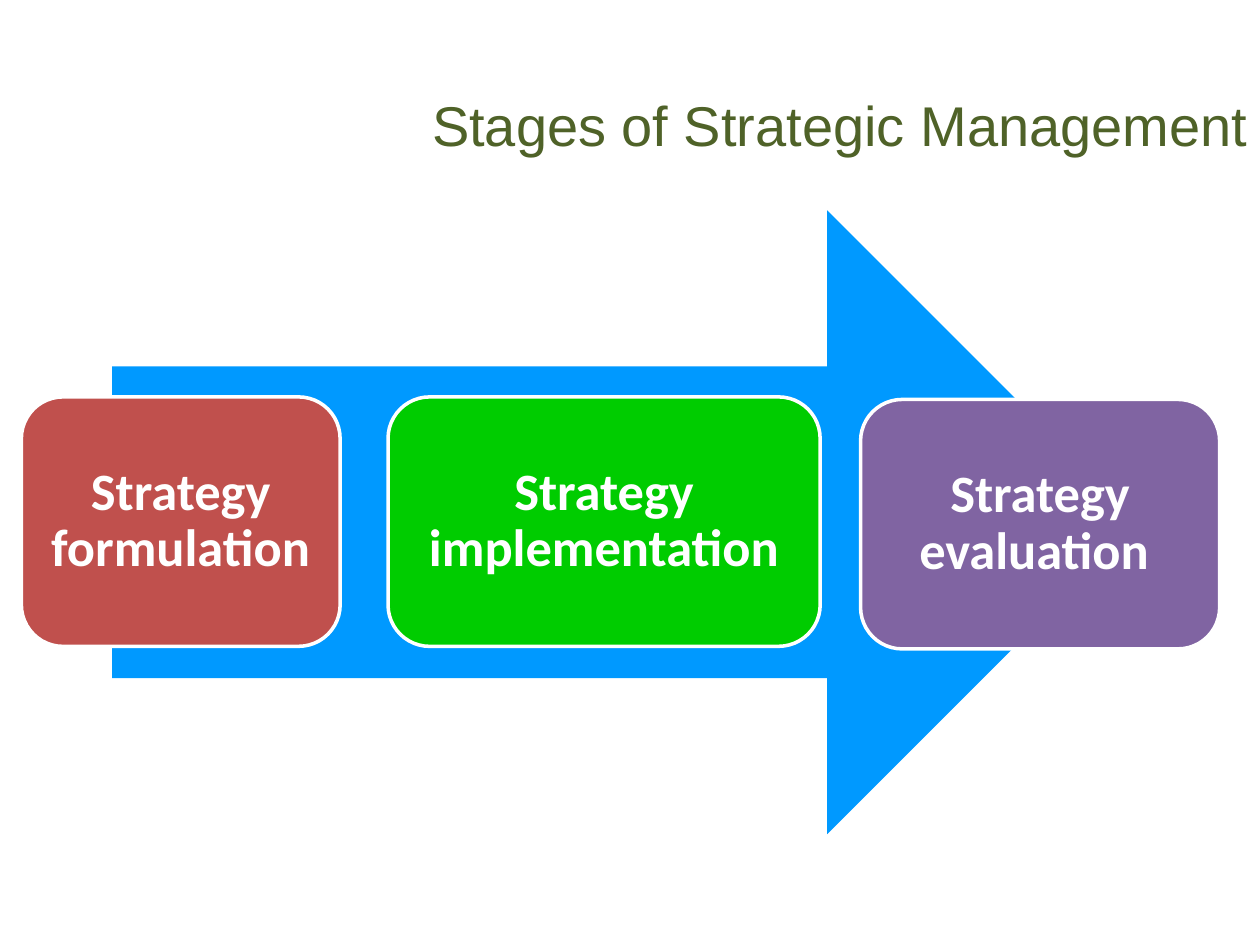
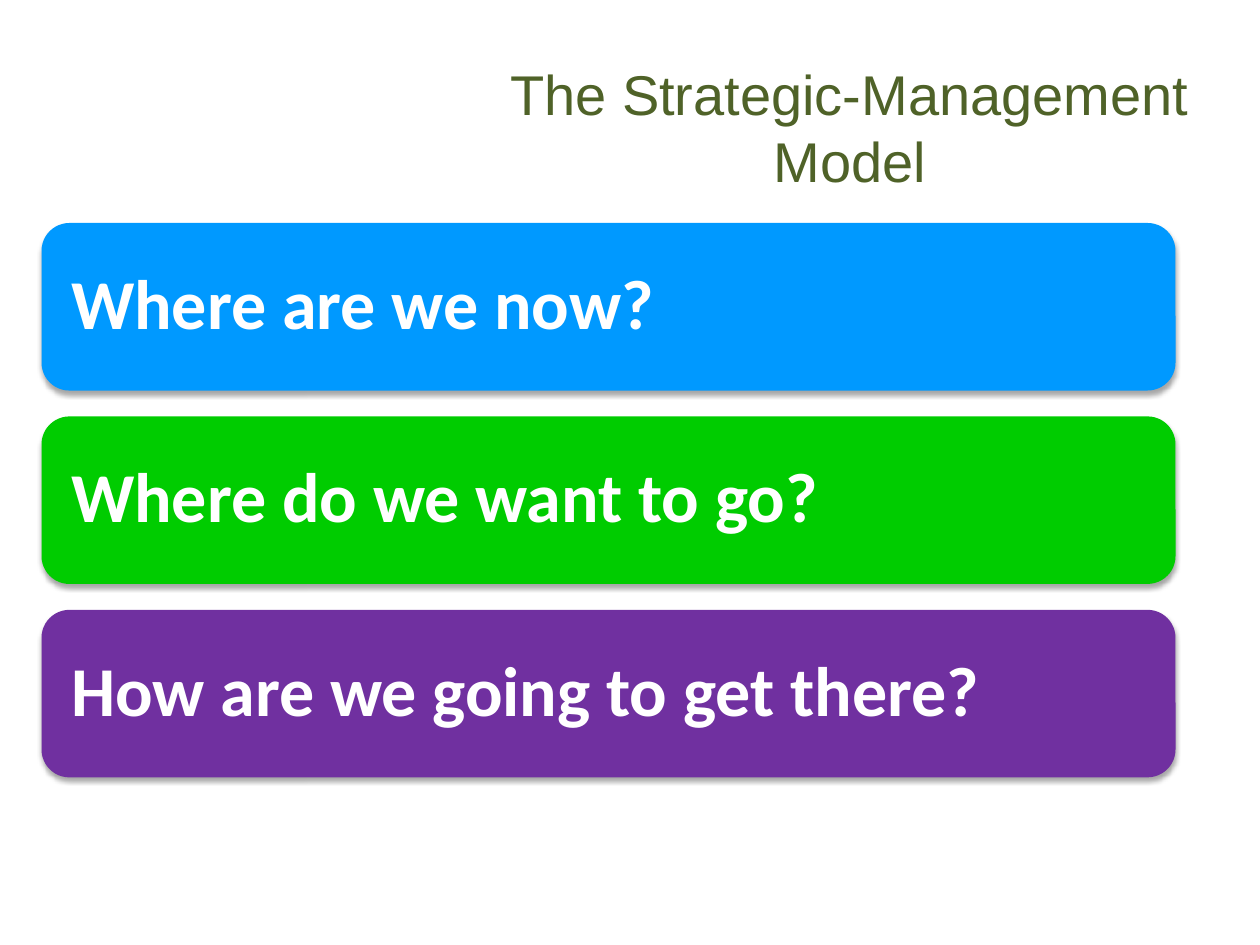
from dataclasses import dataclass

from lxml.etree import SubElement
from pptx import Presentation
from pptx.dml.color import RGBColor
from pptx.enum.shapes import MSO_SHAPE
from pptx.enum.text import MSO_ANCHOR, PP_ALIGN
from pptx.oxml.ns import qn
from pptx.shapes.autoshape import Shape
from pptx.slide import Slide
from pptx.util import Inches, Pt

WHITE = "FFFFFF"
OLIVE = "4F6228"
BLUE = "0099FF"
GREEN = "00CC00"
RED = "C0504D"
MAUVE = "8064A2"
PURPLE = "7030A0"


@dataclass
class Card:
    text: str
    fill: str
    left: float
    top: float
    width: float
    height: float


def rgb(code: str) -> RGBColor:
    return RGBColor.from_string(code)


def write(shape: Shape, text: str, *, size: int, color: str, font: str = "Calibri",
          bold: bool = False, align: PP_ALIGN = PP_ALIGN.CENTER,
          anchor: MSO_ANCHOR = MSO_ANCHOR.MIDDLE, inset: float = 0.1,
          drop: float = 0.05, spacing: float = 1.0) -> None:
    """Put one paragraph in a shape; inset is the side margin, drop the upper and lower."""
    frame = shape.text_frame
    frame.word_wrap = True
    frame.vertical_anchor = anchor
    frame.margin_left = frame.margin_right = Inches(inset)
    frame.margin_top = frame.margin_bottom = Inches(drop)
    para = frame.paragraphs[0]
    para.alignment = align
    para.line_spacing = spacing
    run = para.add_run()
    run.text = text
    run.font.name = font
    run.font.size = Pt(size)
    run.font.bold = bold
    run.font.color.rgb = rgb(color)


def add_title(slide: Slide, text: str, left: float, top: float, width: float) -> None:
    box = slide.shapes.add_textbox(Inches(left), Inches(top), Inches(width), Inches(1.25))
    write(box, text, size=32, color=OLIVE, font="Arial", anchor=MSO_ANCHOR.TOP)


def add_block(slide: Slide, kind: MSO_SHAPE, fill: str, left: float, top: float,
              width: float, height: float) -> Shape:
    """Draw a plain filled shape with no line and no shadow."""
    shape = slide.shapes.add_shape(
        kind, Inches(left), Inches(top), Inches(width), Inches(height))
    shape.shadow.inherit = False
    shape.fill.solid()
    shape.fill.fore_color.rgb = rgb(fill)
    shape.line.fill.background()
    return shape


def add_card(slide: Slide, card: Card, *, size: int, inset: float,
             align: PP_ALIGN) -> Shape:
    shape = add_block(slide, MSO_SHAPE.ROUNDED_RECTANGLE, card.fill,
                      card.left, card.top, card.width, card.height)
    write(shape, card.text, size=size, color=WHITE, bold=True, align=align,
          inset=inset, drop=inset, spacing=0.9)
    return shape


def add_shadow(shape: Shape) -> None:
    """Cast a soft shadow straight down."""
    effects = shape._element.spPr.find(qn("a:effectLst"))
    outer = SubElement(effects, qn("a:outerShdw"), blurRad=str(Pt(3.1)),
                       dist=str(Pt(1.8)), dir="5400000", rotWithShape="0")
    color = SubElement(outer, qn("a:srgbClr"), val="000000")
    SubElement(color, qn("a:alpha"), val="35000")


def draw_stages(slide: Slide) -> None:
    add_block(slide, MSO_SHAPE.RIGHT_ARROW, BLUE, 0.89, 1.67, 8.15, 4.95)
    stages = [
        Card("Strategy formulation", RED, 0.17, 3.15, 2.53, 1.98),
        Card("Strategy implementation", GREEN, 3.08, 3.15, 3.43, 1.98),
        Card("Strategy evaluation ", MAUVE, 6.83, 3.17, 2.85, 1.98),
    ]
    for stage in stages:
        shape = add_card(slide, stage, size=30, inset=0.12, align=PP_ALIGN.CENTER)
        shape.line.color.rgb = rgb(WHITE)
        shape.line.width = Pt(2)
    add_title(slide, "Stages of Strategic Management", 2.17, 0.67, 9)


def draw_model(slide: Slide) -> None:
    top, pitch = 1.77, 1.535
    asks = [
        ("Where are we now?", BLUE),
        ("Where do we want to go?", GREEN),
        ("How are we going to get there?", PURPLE),
    ]
    for row, (text, fill) in enumerate(asks):
        card = Card(text, fill, 0.33, top + row * pitch, 9, 1.33)
        add_shadow(add_card(slide, card, size=40, inset=0.17, align=PP_ALIGN.LEFT))
    add_title(slide, "The Strategic-Management Model", 3.58, 0.42, 6.33)


def main() -> None:
    deck = Presentation()
    deck.slide_width = Inches(10)
    deck.slide_height = Inches(7.5)
    blank = deck.slide_layouts[6]
    for draw in (draw_stages, draw_model):
        draw(deck.slides.add_slide(blank))
    deck.save("out.pptx")


if __name__ == "__main__":
    main()
